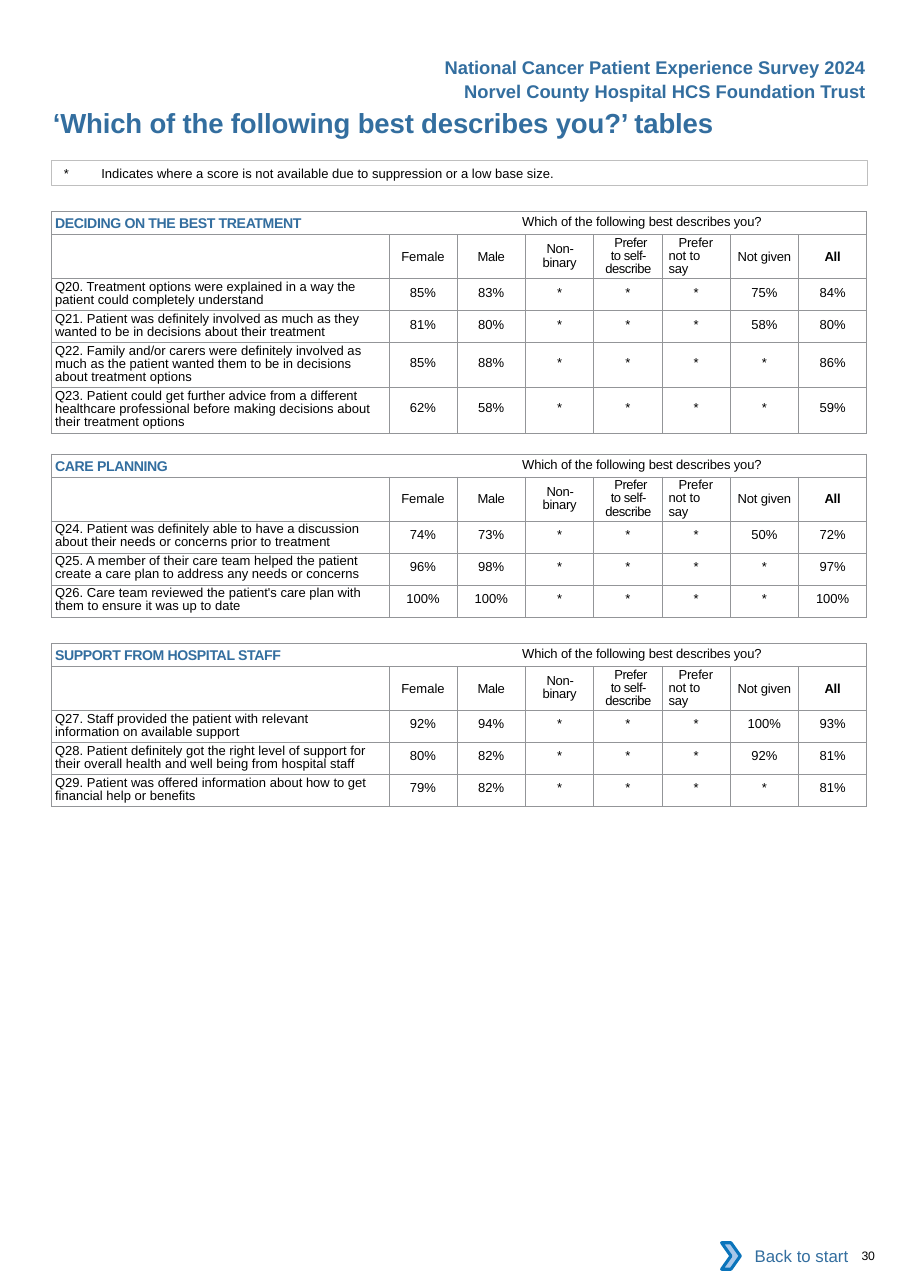
from lxml import etree
from pptx import Presentation
from pptx.dml.color import RGBColor
from pptx.enum.shapes import MSO_SHAPE
from pptx.enum.text import MSO_ANCHOR, PP_ALIGN
from pptx.oxml.ns import qn
from pptx.util import Inches, Pt

BLUE, BLACK, GREY = "336E9F", "000000", "939598"
GROUP_LABEL = "Which of the following best describes you?"
HEADERS = [
    ("Female", 0, 0, 0, 0),
    ("Male", -0.2, 0, 0, 0),
    ("Non- binary", -0.2, 0.15, 0.01, 0.15),
    ("Prefer to self- describe", -0.3, 0.1, 0.04, 0.09),
    ("Prefer not to say", -0.1, 0.06, 0.09, 0.13),
    ("Not given", -0.1, 0, 0, 0),
    ("All", -0.2, 0, 0, 0),
]
SECTIONS = [
    (1.92, "DECIDING ON THE BEST TREATMENT", [
        ("Q20. Treatment options were explained in a way the patient could completely understand",
         "85% 83% * * * 75% 84%", 2),
        ("Q21. Patient was definitely involved as much as they wanted to be in decisions about their treatment",
         "81% 80% * * * 58% 80%", 2),
        ("Q22. Family and/or carers were definitely involved as much as the patient wanted them to be "
         "in decisions about treatment options", "85% 88% * * * * 86%", 3),
        ("Q23. Patient could get further advice from a different healthcare professional before making "
         "decisions about their treatment options", "62% 58% * * * * 59%", 3),
    ]),
    (4.12, "CARE PLANNING", [
        ("Q24. Patient was definitely able to have a discussion about their needs or concerns prior to treatment",
         "74% 73% * * * 50% 72%", 2),
        ("Q25. A member of their care team helped the patient create a care plan to address any needs or concerns",
         "96% 98% * * * * 97%", 2),
        ("Q26. Care team reviewed the patient's care plan with them to ensure it was up to date",
         "100% 100% * * * * 100%", 2),
    ]),
    (5.84, "SUPPORT FROM HOSPITAL STAFF", [
        ("Q27. Staff provided the patient with relevant information on available support",
         "92% 94% * * * 100% 93%", 2),
        ("Q28. Patient definitely got the right level of support for their overall health and well being "
         "from hospital staff", "80% 82% * * * 92% 81%", 2),
        ("Q29. Patient was offered information about how to get financial help or benefits",
         "79% 82% * * * * 81%", 2),
    ]),
]


def rgb(value):
    return RGBColor.from_string(value)


class Page:
    font = "Arial"
    left, width, label_width = 0.47, 7.4, 3.06
    row_height = {2: 0.29, 3: 0.41}
    value_inset = {2: 0.06, 3: 0.12}

    def __init__(self, slide):
        self.slide = slide

    def style(self, r, size, color=BLACK, bold=False, spacing=0):
        r.font.name = self.font
        r.font.size = Pt(size)
        r.font.bold = bold
        r.font.color.rgb = rgb(color)
        if spacing:
            r.font._element.set("spc", str(round(spacing * 100)))

    def indent(self, p, left, first=0, right=0, tab=None):
        pPr = p._p.get_or_add_pPr()
        for name, value in (("marL", left), ("marR", right), ("indent", first)):
            if value:
                pPr.set(name, str(Inches(value)))
        if tab:
            tabs = etree.SubElement(pPr, qn("a:tabLst"))
            etree.SubElement(tabs, qn("a:tab"), pos=str(Inches(tab)), algn="l")

    def insets(self, tf, x, y):
        tf.margin_left = tf.margin_right = Inches(x)
        tf.margin_top = tf.margin_bottom = Inches(y)

    def text(self, box, text, size, color=BLACK, bold=False, align=PP_ALIGN.LEFT,
             inset=(0, 0), wrap=True, spacing=0):
        sp = self.slide.shapes.add_textbox(*map(Inches, box))
        tf = sp.text_frame
        tf.word_wrap = wrap
        self.insets(tf, *inset)
        p = tf.paragraphs[0]
        p.text = text
        p.alignment = align
        self.style(p.runs[0], size, color, bold, spacing)
        return p

    def shape(self, kind, box, fill=None, line=None, weight=0.5):
        sp = self.slide.shapes.add_shape(kind, *map(Inches, box))
        sp.shadow.inherit = False
        if fill:
            sp.fill.solid()
            sp.fill.fore_color.rgb = rgb(fill)
        else:
            sp.fill.background()
        if line:
            sp.line.color.rgb = rgb(line)
            sp.line.width = Pt(weight)
        else:
            sp.line.fill.background()
        return sp

    def frame_cell(self, cell):
        cell.margin_left = cell.margin_right = cell.margin_top = cell.margin_bottom = 0
        tcPr = cell._tc.get_or_add_tcPr()
        for side in ("lnL", "lnR", "lnT", "lnB"):
            ln = etree.SubElement(tcPr, qn(f"a:{side}"), w=str(Pt(0.5)))
            fill = etree.SubElement(ln, qn("a:solidFill"))
            etree.SubElement(fill, qn("a:srgbClr"), val=GREY)
        cell.fill.background()
        cell.text_frame.paragraphs[0]._p.get_or_add_endParaRPr().set("sz", "850")

    def cell_text(self, cell, text, align=None, line=None, bold=False, spacing=0):
        p = cell.text_frame.paragraphs[0]
        p.text = text
        p.alignment = align
        if line:
            p.line_spacing = Pt(line)
        self.style(p.runs[0], 8.5, BLACK, bold, spacing)
        return p

    def section_heading(self, cell, title):
        cell.vertical_anchor = MSO_ANCHOR.MIDDLE
        p = cell.text_frame.paragraphs[0]
        p.line_spacing = Pt(11.8)
        self.indent(p, 0.03, tab=4.24)
        r = p.add_run()
        r.text = title + "\t"
        self.style(r, 15.8, BLUE, True, -0.2)
        r.font._element.set("baseline", "-8000")
        r = p.add_run()
        r.text = GROUP_LABEL
        self.style(r, 8.5, spacing=-0.1)

    def score_table(self, top, title, questions):
        heights = [0.21, 0.4] + [self.row_height[lines] for _, _, lines in questions]
        table = self.slide.shapes.add_table(
            len(heights), len(HEADERS) + 1, Inches(self.left), Inches(top),
            Inches(self.width), Inches(sum(heights))).table
        table.first_row = table.horz_banding = False
        for row, height in zip(table.rows, heights):
            row.height = Inches(height)
        value_width = (self.width - self.label_width) / len(HEADERS)
        for i, column in enumerate(table.columns):
            column.width = Inches(value_width if i else self.label_width)
        for cell in table.iter_cells():
            self.frame_cell(cell)
        table.cell(0, 0).merge(table.cell(0, len(HEADERS)))
        self.section_heading(table.cell(0, 0), title)
        for c, (text, spacing, left, first, right) in enumerate(HEADERS, 1):
            cell = table.cell(1, c)
            cell.vertical_anchor = MSO_ANCHOR.MIDDLE
            align = PP_ALIGN.LEFT if text == "Prefer not to say" else PP_ALIGN.CENTER
            p = self.cell_text(cell, text, align, 8.6 if left else None, text == "All", spacing)
            self.indent(p, left, first, right)
        for r, (question, scores, lines) in enumerate(questions, 2):
            cell = table.cell(r, 0)
            cell.margin_top = Inches(0.02)
            self.indent(self.cell_text(cell, question, PP_ALIGN.LEFT, 8.6), 0.03, right=0.14)
            for c, score in enumerate(scores.split(), 1):
                cell = table.cell(r, c)
                cell.margin_top = Inches(self.value_inset[lines])
                self.cell_text(cell, score, PP_ALIGN.CENTER)


def main():
    prs = Presentation()
    prs.slide_width, prs.slide_height = Inches(8.26), Inches(11.69)
    page = Page(prs.slides.add_slide(prs.slide_layouts[6]))

    p = page.text((7.72, 11.33, 0.51, 0.13), "30", 8, spacing=-0.2)
    page.indent(p, 0.1)
    p = page.text((0.47, 0.96, 6.25, 0.3), "‘Which of the following best describes you?’ tables",
                  18, BLUE, True, spacing=-0.1)
    page.indent(p, 0.01)

    for top, title, questions in SECTIONS:
        page.score_table(top, title, questions)

    note_box = (page.left, 1.46, page.width, 0.22)
    page.shape(MSO_SHAPE.RECTANGLE, note_box, line="BFBFBF")
    p = page.text(note_box, "*\tIndicates where a score is not available due to suppression or a low base size.",
                  8.5, inset=(0, 0.04))
    page.indent(p, 0.11, tab=0.34)

    for box, text in (((4.05, 0.68, 3.91, 0.3), "Norvel County Hospital HCS Foundation Trust"),
                      ((3.92, 0.46, 4.04, 0.3), "National Cancer Patient Experience Survey 2024")):
        page.text(box, text, 12, BLUE, True, PP_ALIGN.RIGHT, (0.1, 0.05), False)

    sp = page.shape(MSO_SHAPE.RECTANGLE, (6.62, 11.19, 1.18, 0.42), fill="FFFFFF")
    tf = sp.text_frame
    tf.vertical_anchor = MSO_ANCHOR.MIDDLE
    tf.text = "Back to start"
    tf.paragraphs[0].alignment = PP_ALIGN.RIGHT
    page.style(tf.paragraphs[0].runs[0], 11, BLUE)
    page.shape(MSO_SHAPE.CHEVRON, (6.55, 11.28, 0.17, 0.24), "A8C7E9", "0A74BB", 2)

    prs.save("out.pptx")


if __name__ == "__main__":
    main()
